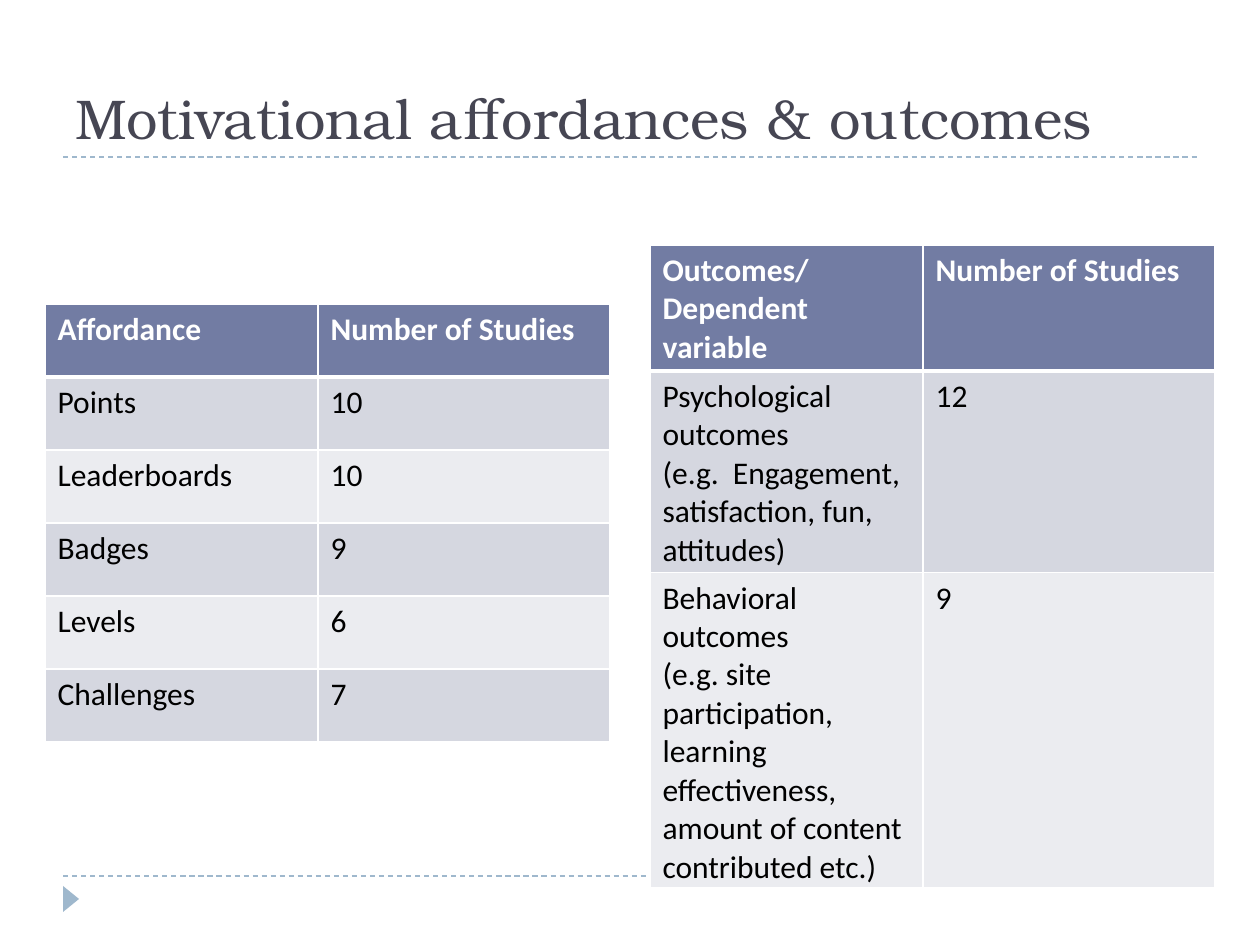
from pptx import Presentation
from pptx.dml.color import RGBColor
from pptx.enum.dml import MSO_LINE
from pptx.enum.shapes import MSO_CONNECTOR, MSO_SHAPE
from pptx.enum.text import MSO_ANCHOR
from pptx.oxml.ns import qn
from pptx.util import Emu, Pt
from lxml import etree

LINE, TRIANGLE = MSO_CONNECTOR.STRAIGHT, MSO_SHAPE.ISOSCELES_TRIANGLE
DASH, BOTTOM = MSO_LINE.DASH, MSO_ANCHOR.BOTTOM

WHITE = RGBColor(0xFF, 0xFF, 0xFF)
BLACK = RGBColor(0x00, 0x00, 0x00)
TITLE = RGBColor(0x46, 0x46, 0x53)
ACCENT = RGBColor(0x9F, 0xB8, 0xCD)
HEADER = RGBColor(0x72, 0x7C, 0xA3)
BANDS = RGBColor(0xD5, 0xD7, 0xE0), RGBColor(0xEB, 0xEC, 0xF0)

TITLE_FONT, BODY_FONT = "TeX Gyre Bonum", "Calibri"
COLUMNS = 273, 292

AFFORDANCES = [
    ("Affordance", "Number of Studies"),
    ("Points", "10"),
    ("Leaderboards", "10"),
    ("Badges", "9"),
    ("Levels", "6"),
    ("Challenges", "7"),
]
OUTCOMES = [
    ("Outcomes/\nDependent variable", "Number of Studies"),
    ("Psychological outcomes\n(e.g.  Engagement, satisfaction, fun, attitudes)", "12"),
    ("Behavioral outcomes\n(e.g. site participation, learning effectiveness, "
     "amount of content contributed etc.)", "9"),
]


def px(n):
    """Turn pixels, 126 to the inch, into EMU."""
    return Emu(round(n * 914400 / 126))


def add_run(p, text, font, size, color, bold=False):
    r = p.add_run()
    r.text = text
    r.font.name, r.font.size, r.font.bold = font, Pt(size), bold
    r.font.color.rgb = color


def add_rule(s, x, y, w):
    line = s.shapes.add_connector(LINE, px(x), px(y), px(x + w), px(y))
    line.line.color.rgb = ACCENT
    line.line.width = Pt(0.75)
    line.line.dash_style = DASH
    etree.SubElement(line._element.spPr, qn("a:effectLst"))


def add_title(s, x, y, w, h, text):
    tf = s.shapes.add_textbox(px(x), px(y), px(w), px(h)).text_frame
    tf.word_wrap = True
    tf.vertical_anchor = BOTTOM
    add_run(tf.paragraphs[0], text, TITLE_FONT, 32, TITLE)
    add_rule(s, x, y + h, w)


def add_footer(s, x, y, w):
    """Draw the bottom rule with the page marker hanging under its left end."""
    add_rule(s, x, y, w)
    sp = s.shapes.add_shape(TRIANGLE, px(x - 5), px(y + 15), px(26), px(16))
    sp.rotation = 90
    sp.shadow.inherit = False
    sp.fill.solid()
    sp.fill.fore_color.rgb = ACCENT
    sp.line.fill.background()


def set_borders(cell, bottom):
    """Give a cell white borders, 1 pt but for the bottom one."""
    tc_pr = cell._tc.get_or_add_tcPr()
    widths = {"lnL": 1, "lnR": 1, "lnT": 1, "lnB": bottom}
    for i, (side, width) in enumerate(widths.items()):
        ln = etree.Element(qn(f"a:{side}"), w=str(Pt(width)))
        fill = etree.SubElement(ln, qn("a:solidFill"))
        etree.SubElement(fill, qn("a:srgbClr"), val=str(WHITE))
        tc_pr.insert(i, ln)


def fill_cell(cell, text, row):
    header = row == 0
    cell.fill.solid()
    cell.fill.fore_color.rgb = HEADER if header else BANDS[(row - 1) % 2]
    set_borders(cell, 3 if header else 1)
    tf = cell.text_frame
    for i, part in enumerate(text.split("\n")):
        p = tf.add_paragraph() if i else tf.paragraphs[0]
        add_run(p, part, BODY_FONT, 18, WHITE if header else BLACK, header)


def add_study_table(s, x, y, h, rows, heights):
    """Place a table; rows grow from their least heights to hold their text."""
    frame = s.shapes.add_table(len(rows), len(COLUMNS), px(x), px(y), px(sum(COLUMNS)), px(h))
    table = frame.table
    for column, width in zip(table.columns, COLUMNS):
        column.width = px(width)
    for i, (texts, height) in enumerate(zip(rows, heights)):
        table.rows[i].height = px(height)
        for j, text in enumerate(texts):
            fill_cell(table.cell(i, j), text, i)
    frame.height = px(h)


def main():
    prs = Presentation()
    prs.slide_width, prs.slide_height = px(1260), px(945)
    s = prs.slides.add_slide(prs.slide_layouts[6])
    add_footer(s, 63, 876, 1134)
    add_title(s, 63, 21, 1134, 136, "Motivational affordances & outcomes")
    add_study_table(s, 45, 304, 435, AFFORDANCES, [73] * len(AFFORDANCES))
    add_study_table(s, 650, 245, 643, OUTCOMES, [73, 145, 145])
    prs.save("out.pptx")


if __name__ == "__main__":
    main()
